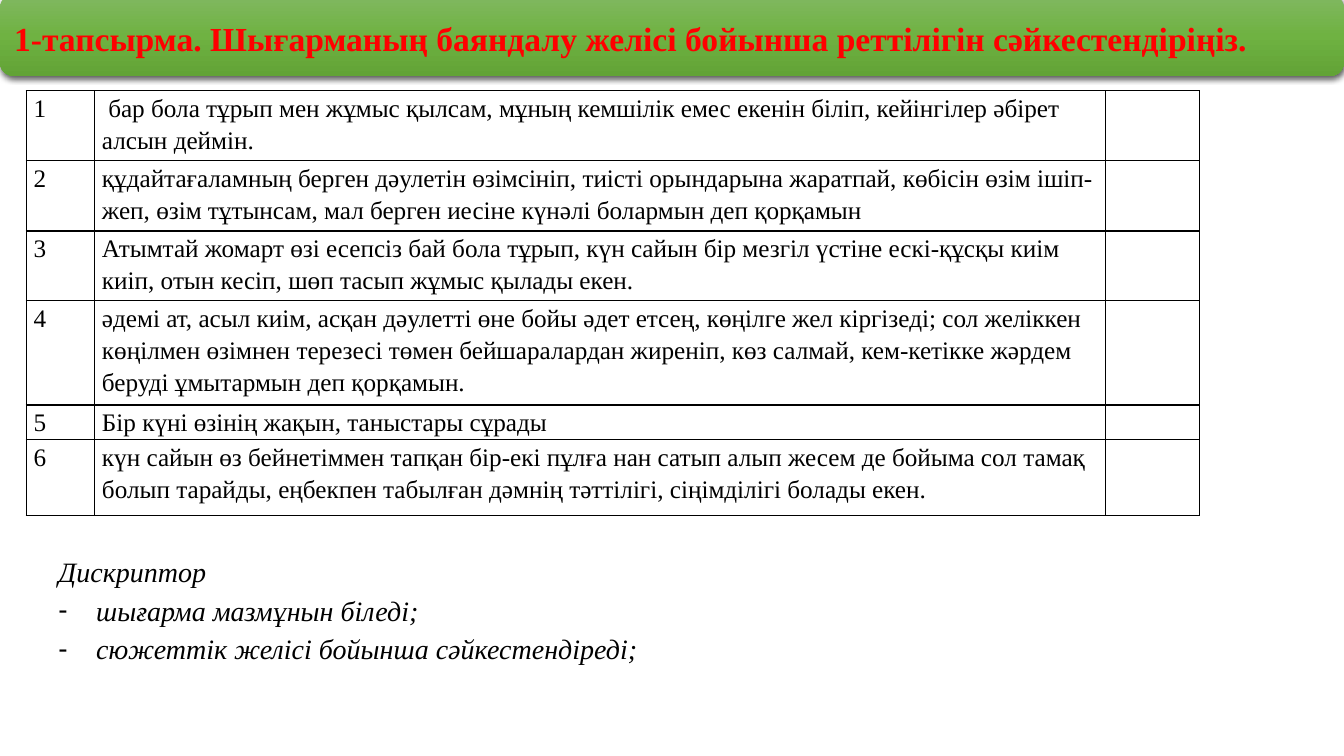
from copy import deepcopy
from dataclasses import dataclass

from lxml.etree import SubElement
from pptx import Presentation
from pptx.dml.color import RGBColor
from pptx.enum.shapes import MSO_SHAPE
from pptx.enum.text import MSO_ANCHOR, MSO_AUTO_SIZE, PP_ALIGN
from pptx.oxml.ns import qn
from pptx.util import Cm, Pt


@dataclass(frozen=True)
class Theme:
    """Colours, font and type sizes of the slide."""
    face: str = "Times New Roman"
    ink: str = "000000"
    red: str = "FF0000"
    greens: tuple = ("81B861", "6FB242", "62A336")
    head: int = 24
    cell: int = 18
    note: int = 20
    lead: float = 1.15


THEME = Theme()
TITLE = "1-тапсырма. Шығарманың баяндалу желісі бойынша реттілігін сәйкестендіріңіз."
STEPS = (
    (1.7, " бар бола тұрып мен жұмыс қылсам, мұның кемшiлiк емес екенiн бiлiп, "
          "кейiнгiлер әбiрет алсын деймiн."),
    (1.78, "құдайтағаламның берген дәулетiн өзiмсiнiп, тиiстi орындарына жаратпай, "
           "көбiсiн өзiм iшiп-жеп, өзiм тұтынсам, мал берген иесiне күнәлi болармын деп қорқамын"),
    (1.72, "Атымтай жомарт өзi есепсiз бай бола тұрып, күн сайын бiр мезгiл үстiне "
           "ескi-құсқы киiм киiп, отын кесiп, шөп тасып жұмыс қылады екен."),
    (2.55, "әдемi ат, асыл киiм, асқан дәулеттi өне бойы әдет етсең, көңiлге жел "
           "кiргiзедi; сол желiккен көңiлмен өзiмнен терезесi төмен бейшаралардан жиренiп, "
           "көз салмай, кем-кетiкке жәрдем берудi ұмытармын деп қорқамын."),
    (0.86, "Бiр күнi өзiнiң жақын, таныстары сұрады"),
    (1.9, "күн сайын өз бейнетiммен тапқан бiр-екi пұлға нан сатып алып жесем де бойыма "
          "сол тамақ болып тарайды, еңбекпен табылған дәмнiң тәттiлiгi, сiңiмдiлiгi болады екен."),
)
WIDTHS = (1.72, 25.48, 2.36)
NOTES = ("Дискриптор", "шығарма мазмұнын біледі;", "сюжеттік желісі бойынша сәйкестендіреді;")


def style(para, size, tint=THEME.ink, bold=False, slant=False):
    """Set the spacing and font of a paragraph."""
    para.alignment = PP_ALIGN.LEFT
    para.line_spacing = THEME.lead
    para.space_before = Pt(0)
    font = para.font
    font.name, font.size = THEME.face, Pt(size)
    font.bold, font.italic = bold, slant
    font.color.rgb = RGBColor.from_string(tint)


def place(shape, left, top, width, height):
    """Move and size a placeholder, in centimetres."""
    shape.left, shape.top = Cm(left), Cm(top)
    shape.width, shape.height = Cm(width), Cm(height)


def add_band(slide):
    """Draw the green band with its soft shadow."""
    band = slide.shapes.add_shape(
        MSO_SHAPE.ROUNDED_RECTANGLE, Cm(0), Cm(-0.13), Cm(33.87), Cm(2.04))
    band.line.fill.background()
    band.fill.gradient()
    band.fill.gradient_angle = 270
    props = band.element.spPr
    stops = props.find(".//" + qn("a:gsLst"))
    stops.insert(1, deepcopy(stops[0]))
    for stop, tint, spot in zip(band.fill.gradient_stops, THEME.greens, (0, 0.5, 1)):
        stop.color.rgb = RGBColor.from_string(tint)
        stop.position = spot
    band.shadow.inherit = False
    glow = SubElement(
        props.find(qn("a:effectLst")), qn("a:outerShdw"), blurRad=str(Pt(4.5)),
        dist=str(Pt(1.5)), dir="5400000", algn="ctr", rotWithShape="0")
    shade = SubElement(glow, qn("a:srgbClr"), val=THEME.ink)
    SubElement(shade, qn("a:alpha"), val="63000")
    tree = slide.shapes.title.element.getparent()
    tree.insert(2, band.element)


def set_title(slide):
    """Put the task title on the band."""
    title = slide.shapes.title
    place(title, 0.1, -0.13, 33.67, 2.04)
    frame = title.text_frame
    frame.text = TITLE
    frame.auto_size = MSO_AUTO_SIZE.NONE
    frame.vertical_anchor = MSO_ANCHOR.MIDDLE
    style(frame.paragraphs[0], THEME.head, THEME.red, bold=True)


def rule_cell(cell):
    """Draw a thin line on each side of a cell."""
    props = cell._tc.get_or_add_tcPr()
    for spot, side in enumerate(("lnL", "lnR", "lnT", "lnB")):
        line = SubElement(props, qn("a:" + side), w=str(Pt(1)))
        fill = SubElement(line, qn("a:solidFill"))
        SubElement(fill, qn("a:srgbClr"), val=THEME.ink)
        props.insert(spot, line)


def fill_cell(cell, text):
    """Write and format one table cell."""
    cell.text = text
    cell.margin_left = cell.margin_right = Cm(0.19)
    cell.margin_top = cell.margin_bottom = Cm(0)
    cell.fill.background()
    style(cell.text_frame.paragraphs[0], THEME.cell)
    rule_cell(cell)


def add_steps(slide):
    """Add the numbered table with an empty answer column."""
    high = sum(tall for tall, _ in STEPS)
    table = slide.shapes.add_table(
        len(STEPS), len(WIDTHS), Cm(0.66), Cm(2.29), Cm(sum(WIDTHS)), Cm(high)).table
    table.first_row = table.horz_banding = False
    for col, width in zip(table.columns, WIDTHS):
        col.width = Cm(width)
    for num, (row, (tall, text)) in enumerate(zip(table.rows, STEPS), 1):
        row.height = Cm(tall)
        for cell, word in zip(row.cells, (str(num), text, "")):
            fill_cell(cell, word)


def set_mark(para, mark):
    """Give a paragraph a dash bullet, or none."""
    props = para._p.get_or_add_pPr()
    dent = Cm(0.95) if mark else 0
    props.set("marL", str(dent))
    props.set("indent", str(-dent))
    if mark:
        SubElement(props, qn("a:buChar"), char=mark)
    else:
        SubElement(props, qn("a:buNone"))


def set_notes(slide):
    """Fill the body with the descriptor list."""
    body = slide.placeholders[1]
    place(body, 1.22, 13.72, 16.94, 2.95)
    frame = body.text_frame
    frame.text = "\n".join(NOTES)
    frame.auto_size = MSO_AUTO_SIZE.SHAPE_TO_FIT_TEXT
    for num, para in enumerate(frame.paragraphs):
        set_mark(para, "-" if num else "")
        style(para, THEME.note, slant=True)


def main():
    """Build and save the slide."""
    deck = Presentation()
    deck.slide_width, deck.slide_height = Cm(33.87), Cm(19.05)
    slide = deck.slides.add_slide(deck.slide_layouts[1])
    add_band(slide)
    set_title(slide)
    add_steps(slide)
    set_notes(slide)
    deck.save("out.pptx")


if __name__ == "__main__":
    main()
